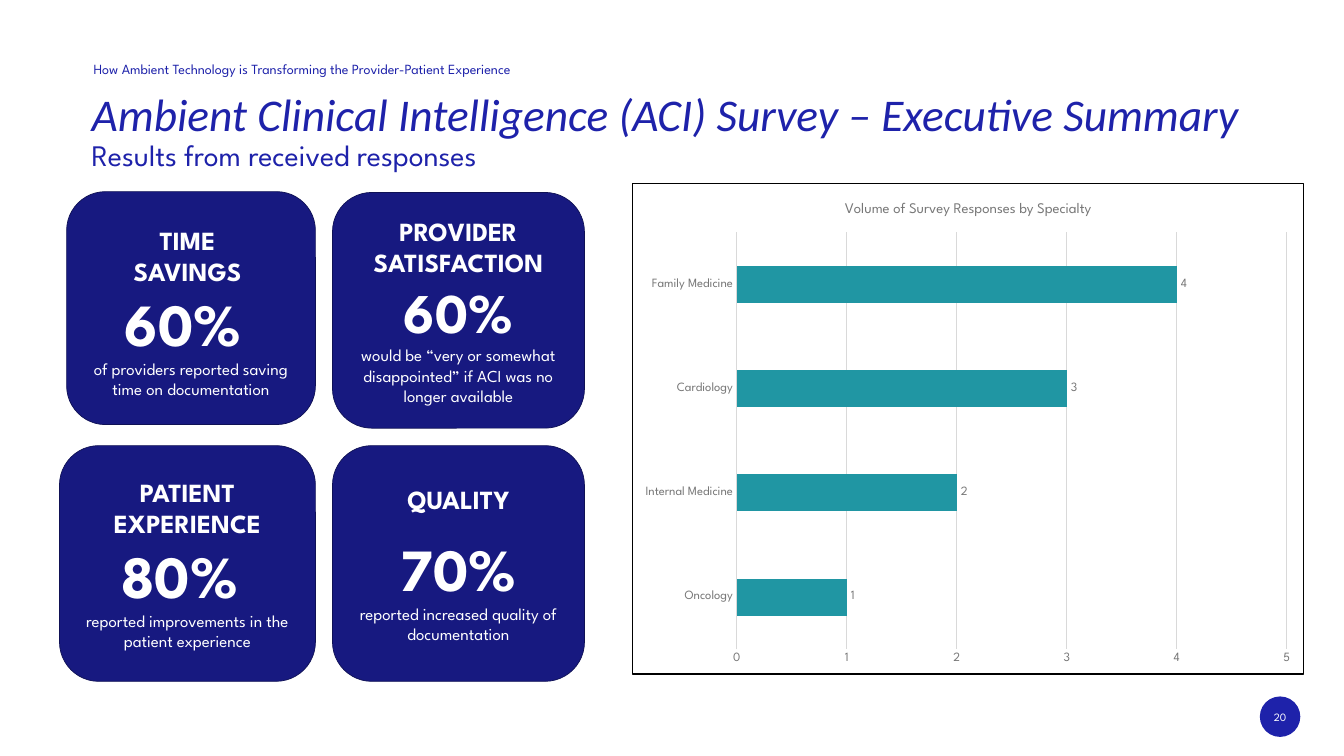
from dataclasses import dataclass

from lxml import etree
from pptx import Presentation
from pptx import util as u
from pptx.chart.data import CategoryChartData
from pptx.dml.color import RGBColor
from pptx.enum import chart as ce, shapes, text
from pptx.oxml import parse_xml
from pptx.oxml.ns import nsdecls, qn

Cm, Pt = u.Cm, u.Pt
SPARTAN = "League Spartan"
BLUE, NAVY, EDGE, TEAL = "1E22AA", "171980", "0F1155", "2096A3"
WHITE, GREY, RULE = "FFFFFF", "777777", "D9D9D9"


@dataclass
class Card:
    x: float
    y: float
    w: float
    h: float
    head: str
    share: str
    note: str
    size: float = 42.7
    gap: float = 0
    drop: float = 0


CARDS = [
    Card(1.68, 4.83, 6.27, 5.87, "TIME \nSAVINGS ", "60% ",
         "of providers reported saving time on documentation", drop=0.17),
    Card(8.38, 4.85, 6.35, 5.94, "PROVIDER SATISFACTION", "60%",
         "would be “very or somewhat disappointed” if ACI was no longer available",
         size=40),
    Card(1.5, 11.23, 6.45, 5.94, "PATIENT EXPERIENCE", "80% ",
         "reported improvements in the patient experience"),
    Card(8.38, 11.23, 6.35, 5.94, "QUALITY", "70%",
         "reported increased quality of documentation", gap=12.6),
]


def hue(code: str) -> RGBColor:
    return RGBColor.from_string(code)


def style(font, size: float, code: str, name: str = SPARTAN,
          bold: bool = False, slant: bool = False) -> None:
    font.size, font.name = Pt(size), name
    font.bold, font.italic = bold, slant
    font.color.rgb = hue(code)


def place(shape, x: float, y: float, w: float, h: float) -> None:
    shape.left, shape.top, shape.width, shape.height = map(Cm, (x, y, w, h))


def bare(frame) -> None:
    """Clear the insets and keep the text size fixed."""
    frame.margin_left = frame.margin_right = 0
    frame.margin_top = frame.margin_bottom = 0
    frame.word_wrap = True
    frame.auto_size = text.MSO_AUTO_SIZE.NONE


def write(frame, words: str, size: float, space: float, **look) -> None:
    bare(frame)
    frame.text = words
    para = frame.paragraphs[0]
    para.line_spacing = space
    para.alignment = text.PP_ALIGN.LEFT
    style(para.runs[0].font, size, BLUE, **look)


def add_label(slide, x: float, y: float, w: float, h: float,
              words: str, size: float, space: float) -> None:
    box = slide.shapes.add_textbox(Cm(x), Cm(y), Cm(w), Cm(h))
    write(box.text_frame, words, size, space)


def add_title(slide) -> None:
    title = slide.shapes.title
    place(title, 2.31, 2.06, 31.32, 1.45)
    title.text_frame.vertical_anchor = text.MSO_ANCHOR.BOTTOM
    write(title.text_frame,
          "Ambient Clinical Intelligence (ACI) Survey – Executive Summary",
          32.4, 0.75, name="Calibri", slant=True)


def add_card(slide, card: Card) -> None:
    box = slide.shapes.add_shape(
        shapes.MSO_SHAPE.ROUNDED_RECTANGLE,
        Cm(card.x), Cm(card.y), Cm(card.w), Cm(card.h))
    box.shadow.inherit = False
    box.fill.solid()
    box.fill.fore_color.rgb = hue(NAVY)
    box.line.color.rgb = hue(EDGE)
    box.line.width = Pt(0.5)
    frame = box.text_frame
    frame.word_wrap = True
    frame.vertical_anchor = text.MSO_ANCHOR.MIDDLE
    frame.margin_top = Cm(0.13 + card.drop)
    frame.text = "\n".join((card.head, card.share, card.note))
    *heads, share, note = frame.paragraphs
    for para in frame.paragraphs:
        para.alignment = text.PP_ALIGN.CENTER
    for para in heads:
        style(para.runs[0].font, 18.7, WHITE, bold=True)
    share.space_before = Pt(card.gap)
    style(share.runs[0].font, card.size, WHITE, bold=True)
    style(note.runs[0].font, 12, WHITE)


def add_badge(slide) -> None:
    dot = slide.shapes.add_shape(shapes.MSO_SHAPE.OVAL,
                                 Cm(31.75), Cm(17.55), Cm(1.02), Cm(1.02))
    dot.shadow.inherit = False
    dot.fill.solid()
    dot.fill.fore_color.rgb = hue(BLUE)
    dot.line.fill.background()
    frame = dot.text_frame
    bare(frame)
    frame.vertical_anchor = text.MSO_ANCHOR.MIDDLE
    frame.text = "20"
    para = frame.paragraphs[0]
    para.alignment = text.PP_ALIGN.CENTER
    style(para.runs[0].font, 8, WHITE)


def frame_chart(chart) -> None:
    """Give the chart its white ground, black border and plot position."""
    root = chart.element
    root.find(qn("c:chart")).addnext(parse_xml(
        f'<c:spPr {nsdecls("c", "a")}>'
        f'<a:solidFill><a:srgbClr val="{WHITE}"/></a:solidFill>'
        '<a:ln w="12700"><a:solidFill><a:srgbClr val="000000"/></a:solidFill>'
        '</a:ln></c:spPr>'))
    plot = root.find(".//" + qn("c:plotArea"))
    for old in plot.findall(qn("c:layout")):
        plot.remove(old)
    layout = parse_xml(f'<c:layout {nsdecls("c")}><c:manualLayout/></c:layout>')
    spot = layout[0]
    for tag, val in (("layoutTarget", "inner"), ("xMode", "edge"),
                     ("yMode", "edge"), ("x", "0.155"), ("y", "0.1"),
                     ("w", "0.82"), ("h", "0.85")):
        etree.SubElement(spot, qn("c:" + tag)).set("val", val)
    plot.insert(0, layout)


def add_bars(slide) -> None:
    data = CategoryChartData()
    data.categories = ["Oncology", "Internal Medicine", "Cardiology",
                       "Family Medicine"]
    data.add_series("Series 1", (1, 2, 3, 4))
    chart = slide.shapes.add_chart(
        ce.XL_CHART_TYPE.BAR_CLUSTERED,
        Cm(15.93), Cm(4.6), Cm(16.94), Cm(12.4), data).chart
    style(chart.font, 9, GREY)
    chart.has_legend = False
    chart.has_title = True
    title = chart.chart_title
    title.include_in_layout = False
    title.text_frame.text = "Volume of Survey Responses by Specialty"
    style(title.text_frame.paragraphs[0].runs[0].font, 10.5, GREY)

    cats, vals = chart.category_axis, chart.value_axis
    for axis in (cats, vals):
        axis.major_tick_mark = axis.minor_tick_mark = ce.XL_TICK_MARK.NONE
        style(axis.tick_labels.font, 9, GREY)
    vals.minimum_scale, vals.maximum_scale, vals.major_unit = 0, 5, 1
    vals.has_major_gridlines = True
    vals.format.line.fill.background()
    for line in (cats.format.line, vals.major_gridlines.format.line):
        line.color.rgb = hue(RULE)
        line.width = Pt(0.75)

    plot = chart.plots[0]
    plot.gap_width = 182
    plot.vary_by_categories = False
    bars = plot.series[0]
    bars.format.fill.solid()
    bars.format.fill.fore_color.rgb = hue(TEAL)
    plot.has_data_labels = True
    labels = plot.data_labels
    labels.show_value = True
    labels.position = ce.XL_LABEL_POSITION.OUTSIDE_END
    style(labels.font, 9, GREY)
    frame_chart(chart)


def main() -> None:
    deck = Presentation()
    deck.slide_width, deck.slide_height = Cm(33.87), Cm(19.05)
    slide = deck.slides.add_slide(deck.slide_layouts[5])
    add_label(slide, 2.36, 1.63, 15.29, 0.71,
              "How Ambient Technology is Transforming the "
              "Provider-Patient Experience", 10, 0.75)
    add_title(slide)
    add_label(slide, 2.31, 3, 31.32, 0.91,
              "Results from received responses", 21.3, 1.5)
    for card in CARDS:
        add_card(slide, card)
    add_bars(slide)
    add_badge(slide)
    deck.save("out.pptx")


if __name__ == "__main__":
    main()
